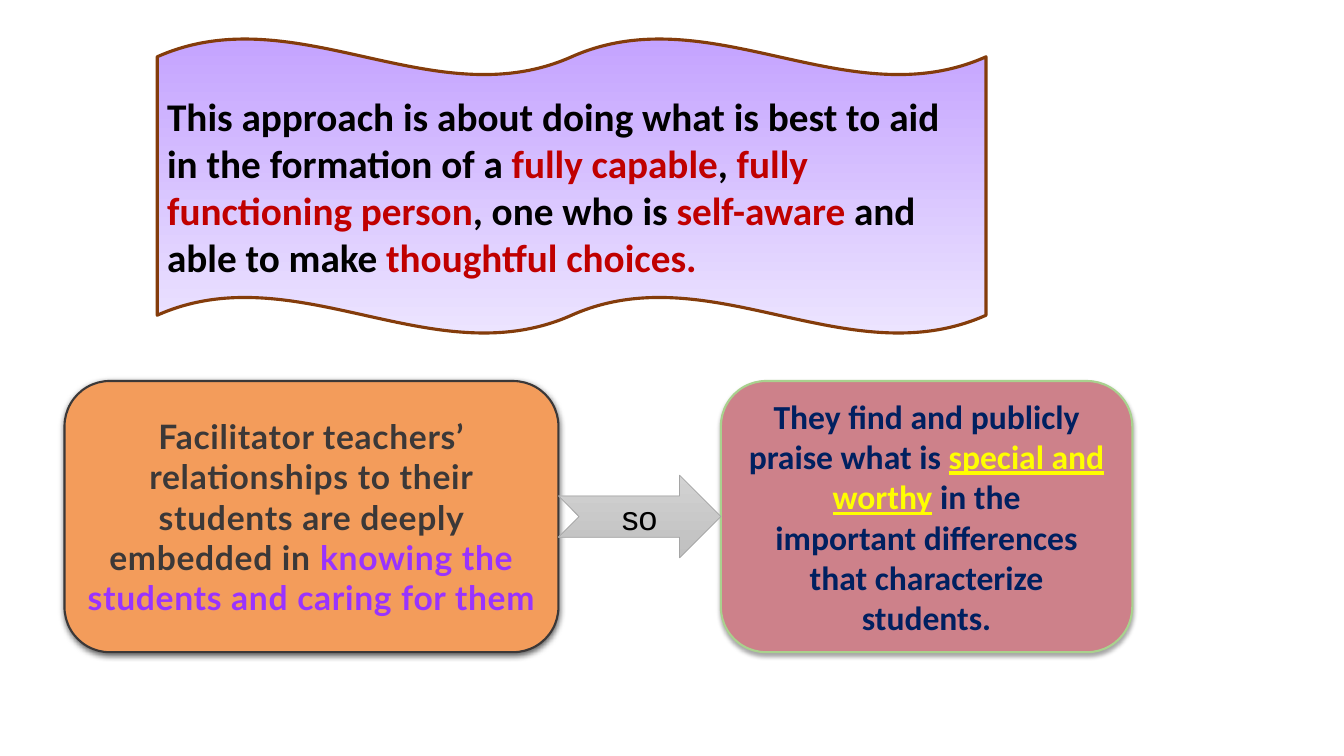
from dataclasses import dataclass
from typing import Optional

from lxml import etree
from pptx import Presentation
from pptx.dml.color import RGBColor
from pptx.enum.shapes import MSO_SHAPE
from pptx.enum.text import MSO_ANCHOR, PP_ALIGN
from pptx.oxml.ns import qn
from pptx.util import Inches, Pt

DOUBLE_WAVE = MSO_SHAPE.DOUBLE_WAVE
ROUNDED = MSO_SHAPE.ROUNDED_RECTANGLE
NOTCHED_ARROW = MSO_SHAPE.NOTCHED_RIGHT_ARROW
LEFT, CENTER = PP_ALIGN.LEFT, PP_ALIGN.CENTER
MIDDLE = MSO_ANCHOR.MIDDLE

BLACK = RGBColor(0x00, 0x00, 0x00)
RED = RGBColor(0xC0, 0x00, 0x00)
BROWN = RGBColor(0x84, 0x3C, 0x0B)
LILAC = RGBColor(0xC4, 0xA3, 0xFF)
PALE_LILAC = RGBColor(0xEC, 0xE4, 0xFF)
ORANGE = RGBColor(0xF3, 0x9C, 0x5B)
CHARCOAL = RGBColor(0x3B, 0x38, 0x38)
VIOLET = RGBColor(0x99, 0x33, 0xFF)
ROSE = RGBColor(0xCD, 0x81, 0x8A)
GREEN = RGBColor(0xA9, 0xD1, 0x8E)
NAVY = RGBColor(0x00, 0x20, 0x60)
YELLOW = RGBColor(0xFF, 0xFF, 0x00)
LIGHT_GRAY = RGBColor(0xD2, 0xD2, 0xD2)
GRAY = RGBColor(0xC0, 0xC0, 0xC0)
DARK_GRAY = RGBColor(0xA5, 0xA5, 0xA5)

SLIDE_WIDTH = Inches(13.33)
SLIDE_HEIGHT = Inches(7.5)
COLUMN = SLIDE_WIDTH / 100
ROW = SLIDE_HEIGHT / 100


@dataclass(frozen=True)
class Area:
    column: float
    row: float
    columns: float
    rows: float


@dataclass(frozen=True)
class Piece:
    text: str
    color: RGBColor
    underline: bool = False


@dataclass(frozen=True)
class Shadow:
    opacity: int
    blur: float
    distance: float


@dataclass(frozen=True)
class Panel:
    preset: MSO_SHAPE
    area: Area
    fills: tuple[RGBColor, ...]
    line_color: RGBColor
    line_width: float
    font: str
    size: int
    paragraphs: tuple[tuple[Piece, ...], ...]
    bold: bool = True
    alignment: PP_ALIGN = CENTER
    letter_spacing: float = 0
    shadow: Optional[Shadow] = None


LEFT_CARD = Area(4.8, 50.4, 36.75, 35.87)
RIGHT_CARD = Area(53.64, LEFT_CARD.row, 30.61, LEFT_CARD.rows)
ARROW_ROWS = 10.93
ARROW_COLUMN = LEFT_CARD.column + LEFT_CARD.columns
ARROW = Area(
    ARROW_COLUMN,
    LEFT_CARD.row + (LEFT_CARD.rows - ARROW_ROWS) / 2,
    RIGHT_CARD.column - ARROW_COLUMN,
    ARROW_ROWS,
)

PANELS = (
    Panel(
        DOUBLE_WAVE, Area(11.7, 5.07, 61.67, 39.07), (LILAC, PALE_LILAC),
        BROWN, 2.25, "Calibri", 28,
        ((
            Piece("This approach is about doing what is best to aid in the formation of a ", BLACK),
            Piece("fully capable", RED),
            Piece(", ", BLACK),
            Piece("fully functioning person", RED),
            Piece(", one who is ", BLACK),
            Piece("self-aware", RED),
            Piece(" and able to make ", BLACK),
            Piece("thoughtful choices.", RED),
        ),),
        alignment=LEFT,
    ),
    Panel(
        ROUNDED, LEFT_CARD, (ORANGE,), CHARCOAL, 1.5, "Lato", 24,
        ((
            Piece("Facilitator teachers’ relationships to their students are deeply embedded in ", CHARCOAL),
            Piece("knowing the students and caring for them", VIOLET),
        ),),
        letter_spacing=0.5, shadow=Shadow(63, 4.5, 1.5),
    ),
    Panel(
        ROUNDED, RIGHT_CARD, (ROSE,), GREEN, 1.5, "Calibri", 24,
        (
            (
                Piece("They find and publicly praise what is ", NAVY),
                Piece("special and worthy", YELLOW, underline=True),
                Piece(" in the", NAVY),
            ),
            (Piece("important differences that characterize students.", NAVY),),
        ),
        shadow=Shadow(35, 3, 2),
    ),
    Panel(
        NOTCHED_ARROW, ARROW, (LIGHT_GRAY, GRAY), DARK_GRAY, 0.5, "Arial", 24,
        ((Piece("so", BLACK),),), bold=False,
    ),
)


def fill_shape(shape, colors: tuple[RGBColor, ...]) -> None:
    if len(colors) == 1:
        shape.fill.solid()
        shape.fill.fore_color.rgb = colors[0]
        return
    shape.fill.gradient()
    shape.fill.gradient_angle = 270
    for stop, color in zip(shape.fill.gradient_stops, colors):
        stop.color.rgb = color


def add_shadow(shape, shadow: Shadow) -> None:
    effects = shape._element.spPr.find(qn("a:effectLst"))
    outer = etree.SubElement(
        effects, qn("a:outerShdw"), blurRad=str(Pt(shadow.blur)),
        dist=str(Pt(shadow.distance)), dir="5400000", rotWithShape="0",
    )
    color = etree.SubElement(outer, qn("a:srgbClr"), val=str(BLACK))
    etree.SubElement(color, qn("a:alpha"), val=str(shadow.opacity * 1000))


def add_piece(paragraph, piece: Piece, panel: Panel) -> None:
    run = paragraph.add_run()
    run.text = piece.text
    run.font.name = panel.font
    run.font.size = Pt(panel.size)
    run.font.bold = panel.bold
    run.font.underline = piece.underline
    run.font.color.rgb = piece.color
    if panel.letter_spacing:
        run.font._element.set("spc", str(round(panel.letter_spacing * 100)))


def draw_panel(slide, panel: Panel) -> None:
    area = panel.area
    shape = slide.shapes.add_shape(
        panel.preset, round(area.column * COLUMN), round(area.row * ROW),
        round(area.columns * COLUMN), round(area.rows * ROW),
    )
    fill_shape(shape, panel.fills)
    shape.line.color.rgb = panel.line_color
    shape.line.width = Pt(panel.line_width)
    shape.shadow.inherit = False
    if panel.shadow:
        add_shadow(shape, panel.shadow)
    frame = shape.text_frame
    frame.word_wrap = True
    frame.vertical_anchor = MIDDLE
    for index, pieces in enumerate(panel.paragraphs):
        paragraph = frame.add_paragraph() if index else frame.paragraphs[0]
        paragraph.alignment = panel.alignment
        for piece in pieces:
            add_piece(paragraph, piece, panel)


def main() -> None:
    presentation = Presentation()
    presentation.slide_width = SLIDE_WIDTH
    presentation.slide_height = SLIDE_HEIGHT
    slide = presentation.slides.add_slide(presentation.slide_layouts[6])
    for panel in PANELS:
        draw_panel(slide, panel)
    presentation.save("out.pptx")


if __name__ == "__main__":
    main()
